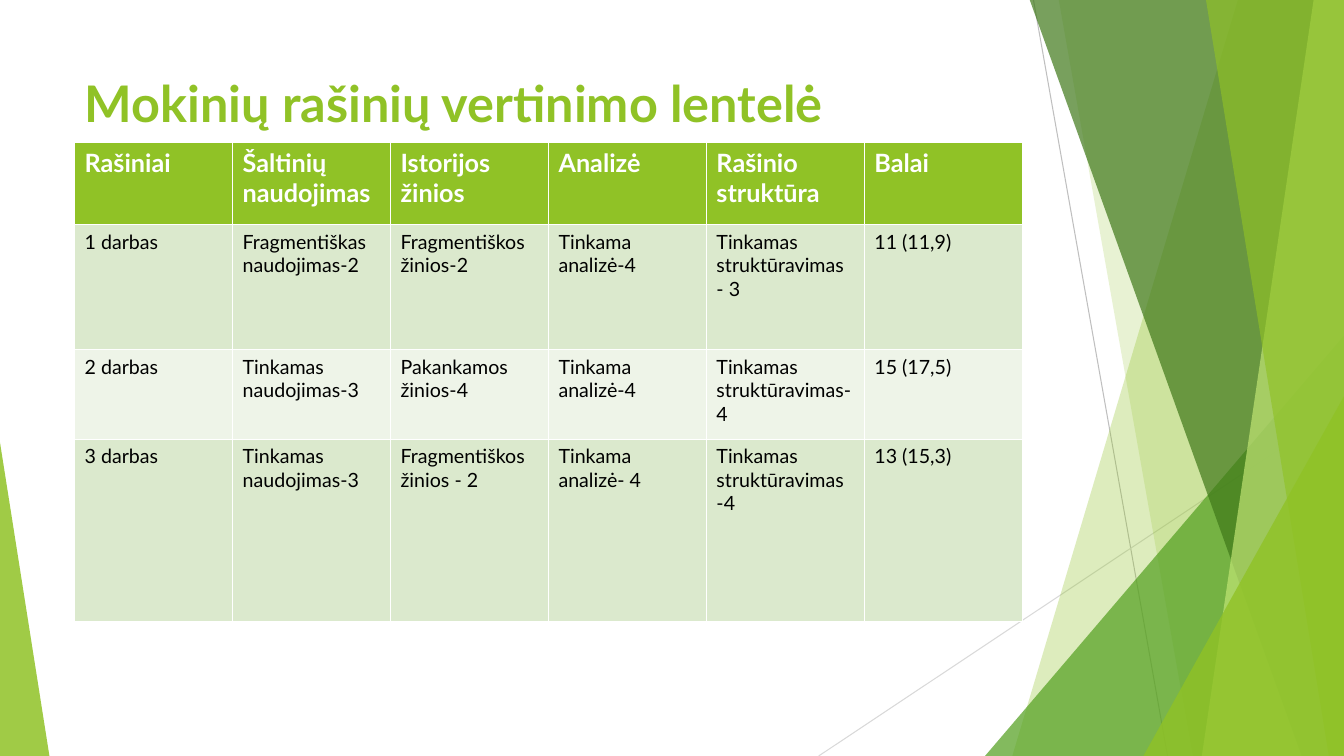
"""Build a slide with a table of essay marks on a green faceted backdrop."""
from typing import NamedTuple

from lxml import etree
from pptx import Presentation
from pptx.dml import color
from pptx.enum import shapes as kinds, text
from pptx.oxml import ns
from pptx.util import Inches, Pt

GREEN = "90C226"
FONT = "Lato"
WIDE, HIGH = 13.33, 7.5


class Ray(NamedTuple):
    start: tuple[float, float]
    end: tuple[float, float]
    tint: str


class Facet(NamedTuple):
    top: tuple[float, float]
    base: tuple[float, float]
    tint: str
    alpha: int


class Wedge(NamedTuple):
    left: float
    top: float
    width: float
    peak: int
    tint: str
    alpha: int


RAYS = [
    Ray((10.25, 0), (11.58, HIGH), "BFBFBF"),
    Ray((WIDE, 4.03), (8.12, HIGH), "D9D9D9"),
]
PANES = [
    Facet((12.28, WIDE), (10.04, WIDE), GREEN, 30),
    Facet((10.5, WIDE), (11.83, WIDE), GREEN, 20),
    Wedge(9.77, 3.33, 3.56, 1, "54A021", 72),
    Facet((10.21, WIDE), (12.91, WIDE), "3F7819", 70),
    Facet((13.03, WIDE), (11.92, WIDE), "C0E474", 70),
    Facet((11.96, WIDE), (13.18, WIDE), GREEN, 65),
    Wedge(11.34, 3.93, 1.99, 1, GREEN, 80),
    Wedge(0, 4.39, 0.49, 0, GREEN, 85),
]
ROWS = [
    ["Rašiniai", "Šaltinių naudojimas", "Istorijos žinios", "Analizė",
     "Rašinio struktūra", "Balai"],
    ["1 darbas", "Fragmentiškas naudojimas-2", "Fragmentiškos žinios-2",
     "Tinkama analizė-4", "Tinkamas struktūravimas - 3", "11 (11,9)"],
    ["2 darbas", "Tinkamas naudojimas-3", "Pakankamos žinios-4",
     "Tinkama analizė-4", "Tinkamas struktūravimas- 4", "15 (17,5)"],
    ["3 darbas", "Tinkamas naudojimas-3", "Fragmentiškos žinios - 2",
     "Tinkama analizė- 4", "Tinkamas struktūravimas -4", "13 (15,3)"],
]
HEIGHTS = [0.82, 1.24, 0.89, 1.81]
FILLS = [GREEN, "DBE9CD", "EEF4E8", "DBE9CD"]


def paint(form, tint: str) -> None:
    form.fore_color.rgb = color.RGBColor.from_string(tint)


def style(para, size: int, tint: str, bold: bool) -> None:
    font = para.font
    font.name, font.size, font.bold = FONT, Pt(size), bold
    font.color.rgb = color.RGBColor.from_string(tint)


def draw_ray(slide, ray: Ray) -> None:
    ends = [Inches(n) for n in ray.start + ray.end]
    line = slide.shapes.add_connector(kinds.MSO_CONNECTOR.STRAIGHT, *ends)
    line.line.width = Pt(0.75)
    line.line.color.rgb = color.RGBColor.from_string(ray.tint)
    etree.SubElement(line._element.spPr, ns.qn("a:effectLst"))


def draw_pane(slide, pane: Facet | Wedge) -> None:
    if isinstance(pane, Facet):
        (left, right), (low, far) = pane.top, pane.base
        spots = [(left, -0.01), (right, -0.01), (far, HIGH), (low, HIGH)]
        dots = [(Inches(x), Inches(y)) for x, y in spots]
        form = slide.shapes.build_freeform(*dots[0])
        form.add_line_segments(dots[1:], close=True)
        shape = form.convert_to_shape()
    else:
        shape = slide.shapes.add_shape(
            kinds.MSO_SHAPE.ISOSCELES_TRIANGLE, Inches(pane.left),
            Inches(pane.top), Inches(pane.width), Inches(HIGH - pane.top))
        shape.adjustments[0] = pane.peak
    shape.shadow.inherit = False
    shape.line.fill.background()
    shape.fill.solid()
    paint(shape.fill, pane.tint)
    tone = shape._element.spPr.find(".//" + ns.qn("a:srgbClr"))
    etree.SubElement(tone, ns.qn("a:alpha"), val=str(pane.alpha * 1000))


def set_title(slide, words: str) -> None:
    title = slide.shapes.title
    title.left, title.top = Inches(0.74), Inches(0.67)
    title.width, title.height = Inches(9.4), Inches(1.44)
    frame = title.text_frame
    frame.text = words
    frame.word_wrap = True
    frame.auto_size = text.MSO_AUTO_SIZE.NONE
    frame.vertical_anchor = text.MSO_ANCHOR.TOP
    para = frame.paragraphs[0]
    para.alignment = text.PP_ALIGN.LEFT
    style(para, 36, GREEN, True)
    slide.shapes._spTree.append(title._element)


def add_marks(slide) -> None:
    table = slide.shapes.add_table(
        len(ROWS), len(ROWS[0]), Inches(0.74), Inches(1.41),
        Inches(9.4), Inches(sum(HEIGHTS))).table
    for r, (row, height, tint) in enumerate(zip(ROWS, HEIGHTS, FILLS)):
        table.rows[r].height = Inches(height)
        for c, words in enumerate(row):
            cell = table.cell(r, c)
            cell.text = words
            cell.fill.solid()
            paint(cell.fill, tint)
            look = (14, "000000", False) if r else (18, "FFFFFF", True)
            style(cell.text_frame.paragraphs[0], *look)


def main() -> None:
    deck = Presentation()
    deck.slide_width, deck.slide_height = Inches(WIDE), Inches(HIGH)
    slide = deck.slides.add_slide(deck.slide_layouts[5])
    for ray in RAYS:
        draw_ray(slide, ray)
    for pane in PANES:
        draw_pane(slide, pane)
    set_title(slide, "Mokinių rašinių vertinimo lentelė")
    add_marks(slide)
    deck.save("out.pptx")


if __name__ == "__main__":
    main()
